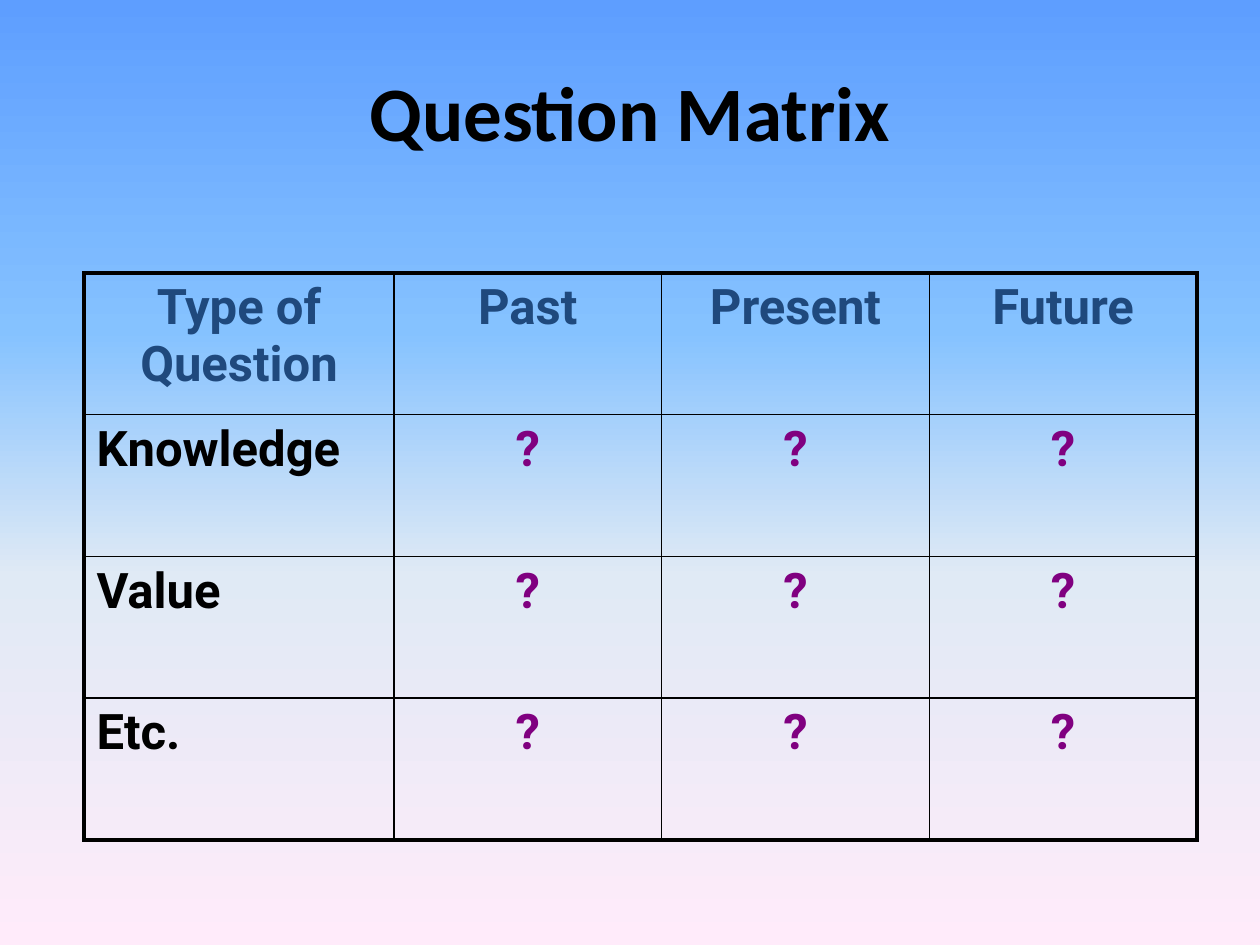
from dataclasses import dataclass

from lxml.etree import SubElement
from pptx import Presentation
from pptx.dml.color import RGBColor
from pptx.enum.text import MSO_ANCHOR as Anchor, PP_ALIGN as Align
from pptx.oxml.ns import qn
from pptx.util import Inches, Pt


@dataclass(frozen=True)
class Theme:
    black: str = "000000"
    heading: str = "1F497D"
    mark: str = "800080"
    title_font: str = "Calibri"
    table_font: str = "Roboto"
    title_size: int = 44
    table_size: int = 28
    thin: float = 1
    thick: float = 2.25
    sky: tuple = ((0, "5E9EFF"), (35, "85C2FF"), (61, "E0EAF5"), (100, "FFEBFA"))


THEME = Theme()
MATRIX = [["Type of Question", "Past", "Present", "Future"]] + [
    [kind, "?", "?", "?"] for kind in ("Knowledge", "Value", "Etc.")
]


def apply_format(target, values):
    for name, value in values.items():
        setattr(target, name, value)


def paint_background(page):
    fill = page.background.fill
    fill.gradient()
    fill.gradient_angle = 270
    stop_list = page.element.find(".//" + qn("a:gsLst"))
    for default_stop in list(stop_list):
        stop_list.remove(default_stop)
    for position, color in THEME.sky:
        stop = SubElement(stop_list, qn("a:gs"), pos=str(position * 1000))
        SubElement(stop, qn("a:srgbClr"), val=color)


def write_text(frame, text, font, size, color, align):
    para = frame.paragraphs[0]
    para.alignment = align
    span = para.add_run()
    span.text = text
    apply_format(span.font, {"name": font, "size": Pt(size), "bold": True})
    span.font.color.rgb = RGBColor.from_string(color)


def add_title(page, text):
    box = page.shapes.add_textbox(Inches(0.33), Inches(0.25), Inches(9.34), Inches(1.25))
    apply_format(box.text_frame, {"word_wrap": True, "vertical_anchor": Anchor.MIDDLE})
    write_text(box.text_frame, text, THEME.title_font, THEME.title_size,
               THEME.black, Align.CENTER)


def set_borders(cell, outer_sides):
    properties = cell._tc.get_or_add_tcPr()
    for side in ("L", "R", "T", "B"):
        width = THEME.thick if side in outer_sides else THEME.thin
        line = SubElement(properties, qn("a:ln" + side), w=str(Pt(width)))
        fill = SubElement(line, qn("a:solidFill"))
        SubElement(fill, qn("a:srgbClr"), val=THEME.black)


def cell_style(row, column):
    if row == 0:
        return THEME.heading, Align.CENTER
    if column == 0:
        return THEME.black, Align.LEFT
    return THEME.mark, Align.CENTER


def add_matrix(page, rows):
    last_row, last_column = len(rows) - 1, len(rows[0]) - 1
    left, top, width, height = Inches(2 / 3), Inches(13 / 6), Inches(53 / 6), Inches(4.5)
    first_width = Inches(2.46)
    table = page.shapes.add_table(len(rows), len(rows[0]), left, top, width, height).table
    apply_format(table, {"first_row": False, "horz_banding": False})
    for index, column in enumerate(table.columns):
        column.width = (width - first_width) // last_column if index else first_width
    for r, texts in enumerate(rows):
        for c, text in enumerate(texts):
            cell = table.cell(r, c)
            edges = {"L": c == 0, "R": c == last_column, "T": r == 0, "B": r == last_row}
            set_borders(cell, [side for side, is_outer in edges.items() if is_outer])
            cell.fill.background()
            color, align = cell_style(r, c)
            write_text(cell.text_frame, text, THEME.table_font, THEME.table_size, color, align)


def main():
    deck = Presentation()
    apply_format(deck, {"slide_width": Inches(10), "slide_height": Inches(7.5)})
    page = deck.slides.add_slide(deck.slide_layouts[6])
    paint_background(page)
    add_title(page, "Question Matrix")
    add_matrix(page, MATRIX)
    deck.save("out.pptx")


if __name__ == "__main__":
    main()
